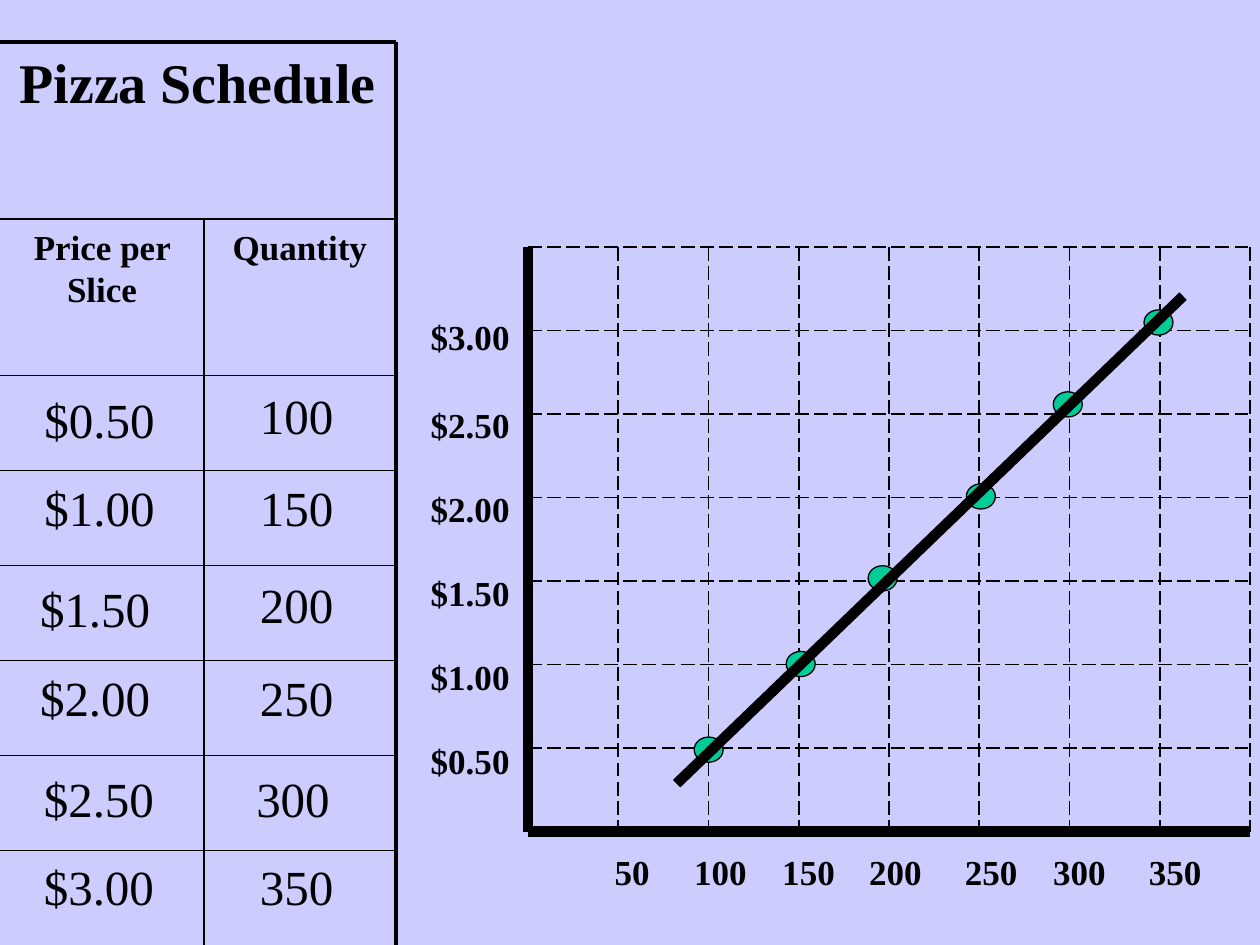
from lxml import etree
from pptx import Presentation
from pptx.dml.color import RGBColor
from pptx.enum import dml, shapes, text
from pptx.oxml import ns
from pptx.util import Inches, Pt

BLACK = RGBColor(0x00, 0x00, 0x00)
GREEN = RGBColor(0x00, 0xCC, 0x99)
LILAC = RGBColor(0xCC, 0xCC, 0xFF)
FONT = "Times New Roman"

# Table edges
RIGHT, TOP, MID, FOOT = 3.14, 0.33, 1.62, 7.5
HEAD, BODY, STEP = 1.74, 2.98, 0.754
# Price, quantity, price left / top / width, quantity top / width
ROWS = [
    ("$0.50", "100", 0.07, 3.04, 1.44, 3.01, 1.57),
    ("$1.00", "150", 0.07, 3.74, 1.44, 3.74, 1.57),
    ("$1.50", "200", 0, 4.54, 1.51, 4.51, 1.57),
    ("$2.00", "250", 0, 5.25, 1.51, 5.25, 1.57),
    ("$2.50", "300", 0, 6.05, 1.57, 6.05, 1.51),
    ("$3.00", "350", 0, 6.75, 1.57, 6.75, 1.57),
]

# Graph edges, grid counts and point positions
X0, X1, Y0, Y1 = 4.19, 9.92, 1.96, 6.6
COLS, BANDS = 8, 7
TABS = [0.63, 1.33, 2.02, 2.78, 3.48, 4.24]
DOTS = [(5.51, 5.85), (6.24, 5.17), (6.89, 4.49),
        (7.67, 3.84), (8.36, 3.11), (9.08, 2.46)]


def add_run(para, words, size, bold):
    run = para.add_run()
    run.text = words
    font = run.font
    font.name, font.size, font.bold = FONT, Pt(size), bold
    font.color.rgb = BLACK


def add_text(slide, words, left, top, width, height, size,
             bold=False, align=text.PP_ALIGN.CENTER, wrap=True):
    box = slide.shapes.add_textbox(
        Inches(left), Inches(top), Inches(width), Inches(height))
    frame = box.text_frame
    frame.word_wrap = wrap
    para = frame.paragraphs[0]
    para.alignment = align
    if words:
        add_run(para, words, size, bold)
    return frame


def add_line(slide, x1, y1, x2, y2, width=1, dash=False):
    line = slide.shapes.add_connector(
        shapes.MSO_CONNECTOR.STRAIGHT,
        Inches(x1), Inches(y1), Inches(x2), Inches(y2))
    line.line.color.rgb = BLACK
    line.line.width = Pt(width)
    if dash:
        line.line.dash_style = dml.MSO_LINE.LONG_DASH
    etree.SubElement(line._element.spPr, ns.qn("a:effectLst"))


def add_dot(slide, left, top):
    dot = slide.shapes.add_shape(
        shapes.MSO_SHAPE.OVAL,
        Inches(left), Inches(top), Inches(0.23), Inches(0.2))
    dot.shadow.inherit = False
    dot.fill.solid()
    dot.fill.fore_color.rgb = GREEN
    dot.line.color.rgb = BLACK
    dot.line.width = Pt(0.75)


def set_title(slide, words):
    title = slide.shapes.title
    title.left, title.top = Inches(0), Inches(TOP)
    title.width, title.height = Inches(RIGHT), Inches(HEAD - TOP)
    frame = title.text_frame
    frame.auto_size = text.MSO_AUTO_SIZE.NONE
    frame.vertical_anchor = text.MSO_ANCHOR.TOP
    para = frame.paragraphs[0]
    para.alignment = text.PP_ALIGN.CENTER
    add_run(para, words, 32, True)


def add_schedule(slide):
    # Column heads
    add_text(slide, "Price per Slice", 0, HEAD, MID, BODY - HEAD, 20, True)
    add_text(slide, "Quantity", MID, HEAD, RIGHT - MID, BODY - HEAD, 20, True)
    # Rules
    add_line(slide, 0, TOP, RIGHT, TOP, 2.25)
    for y in [HEAD] + [BODY + i * STEP for i in range(len(ROWS))]:
        add_line(slide, 0, y, RIGHT, y)
    add_line(slide, RIGHT, TOP, RIGHT, FOOT, 2.25)
    add_line(slide, MID, HEAD, MID, FOOT)
    # Values
    for price, count, left, top, width, top2, width2 in ROWS:
        add_text(slide, price, left, top, width, 0.57, 28)
        add_text(slide, count, 1.57, top2, width2, 0.57, 28)


def add_grid(slide):
    for i in range(BANDS):
        y = Y0 + i * (Y1 - Y0) / BANDS
        add_line(slide, X0, y, X1, y, dash=True)
    for i in range(1, COLS + 1):
        x = X0 + i * (X1 - X0) / COLS
        add_line(slide, x, Y0, x, Y1, dash=True)
    # Axes
    add_line(slide, X0, Y1, X1, Y1, 6)
    add_line(slide, X0, Y0, X0, Y1, 6)


def add_labels(slide):
    left = text.PP_ALIGN.LEFT
    # Prices up the side
    frame = add_text(slide, "", 3.32, 2.12, 0.83, 4.13, 20,
                     align=left, wrap=False)
    for i, row in enumerate(reversed(ROWS)):
        para = frame.add_paragraph() if i else frame.paragraphs[0]
        para.alignment = left
        para.line_spacing = 2.1 if i == 1 else 2.0
        add_run(para, row[0], 20, True)
    # Quantities along the foot, set on tab stops
    frame = add_text(slide, "50", 4.78, 6.7, 5.52, 0.43, 20, True, left)
    para = frame.paragraphs[0]
    stops = etree.SubElement(para._p.get_or_add_pPr(), ns.qn("a:tabLst"))
    for stop, row in zip(TABS, ROWS):
        etree.SubElement(stops, ns.qn("a:tab"),
                         pos=str(Inches(stop)), algn="l")
        add_run(para, "\t" + row[1], 20, True)


def main():
    prs = Presentation()
    prs.slide_width, prs.slide_height = Inches(10), Inches(7.5)
    slide = prs.slides.add_slide(prs.slide_layouts[5])
    slide.background.fill.solid()
    slide.background.fill.fore_color.rgb = LILAC

    set_title(slide, "Pizza Schedule")
    add_schedule(slide)
    add_grid(slide)
    add_labels(slide)
    for left, top in DOTS:
        add_dot(slide, left, top)
    # Supply line
    add_line(slide, 5.37, 6.22, 9.39, 2.35, 6)
    prs.save("out.pptx")


if __name__ == "__main__":
    main()
